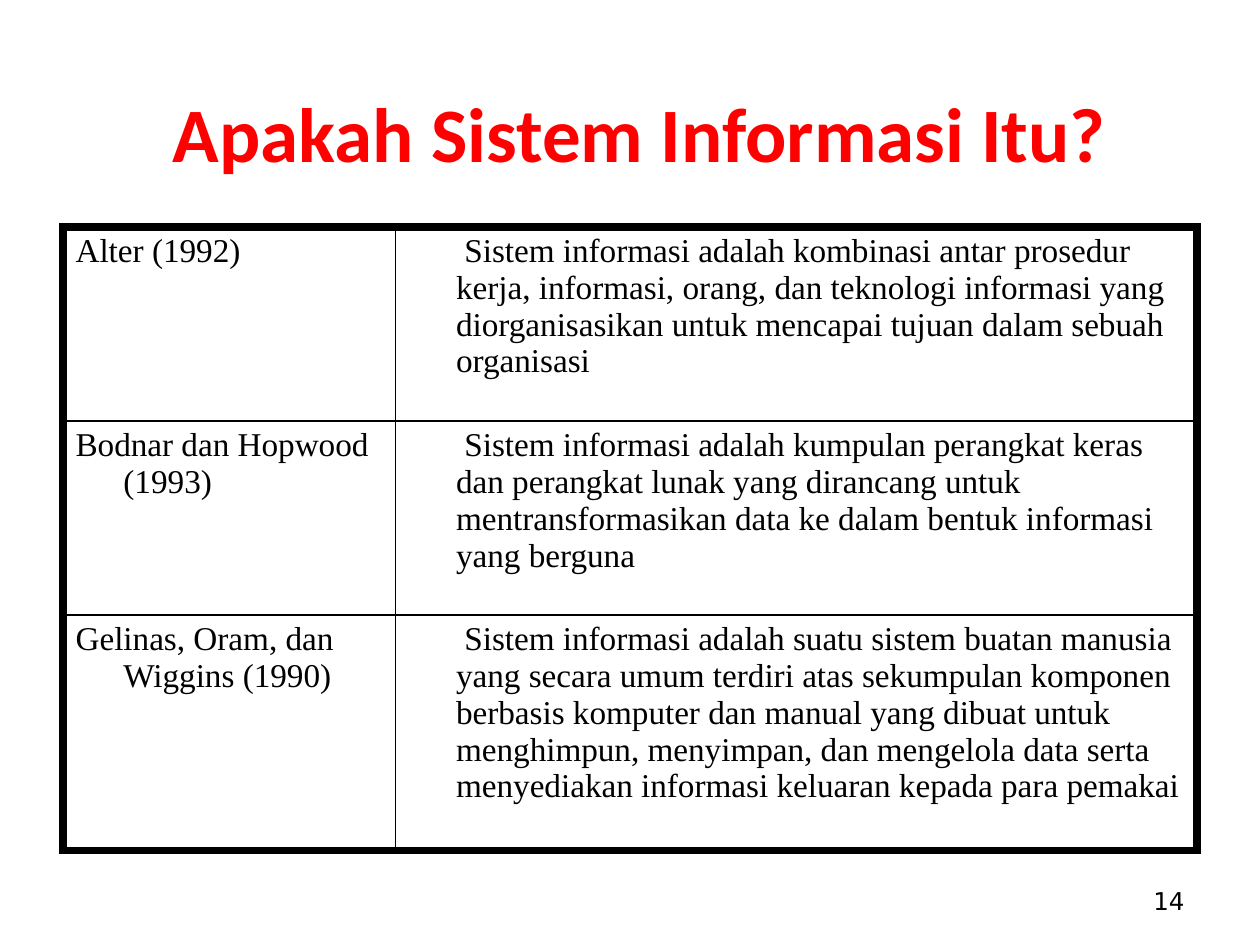
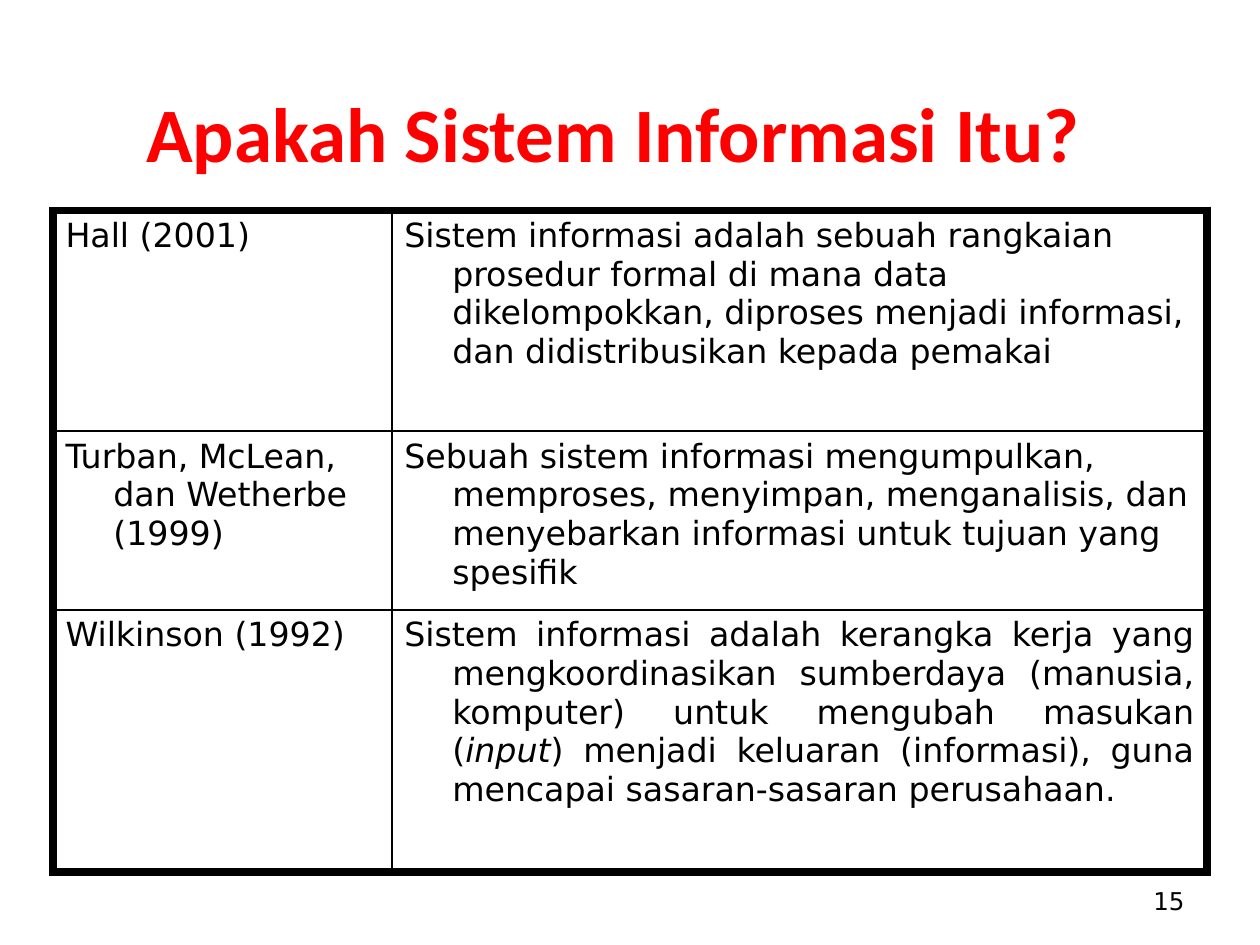
from dataclasses import dataclass

from lxml import etree
from pptx import Presentation
from pptx.dml.color import RGBColor
from pptx.enum.text import MSO_ANCHOR, PP_ALIGN
from pptx.oxml.ns import qn
from pptx.util import Inches, Pt

BLACK = RGBColor(0x00, 0x00, 0x00)
WHITE = RGBColor(0xFF, 0xFF, 0xFF)
RED = RGBColor(0xFF, 0x00, 0x00)
LEFT, CENTER, RIGHT, JUSTIFY = (PP_ALIGN.LEFT, PP_ALIGN.CENTER,
                                PP_ALIGN.RIGHT, PP_ALIGN.JUSTIFY)
MIDDLE = MSO_ANCHOR.MIDDLE

TITLE = "Apakah Sistem Informasi Itu?"
TITLE_FONT, SERIF, SANS = "Calibri", "Times New Roman", "DejaVu Sans"
OUTER_LINE, INNER_LINE = Pt(5), Pt(1)
HANGING = Inches(0.38)
TAB_STOPS = (Inches(-1), Inches(-0.5), Inches(0.3))


@dataclass(frozen=True)
class Definition:
    author: str
    wording: tuple[str, ...]  # every second piece is italic
    height: float
    align: PP_ALIGN = LEFT


@dataclass(frozen=True)
class DefinitionSlide:
    number: int
    title_left: float
    title_width: float
    left: float
    top: float
    col_widths: tuple[float, float]
    font: str
    definitions: tuple[Definition, ...]


SLIDES = (
    DefinitionSlide(14, 1.08, 8, 0.5, 1.8, (2.64, 6.36), SERIF, (
        Definition("Alter (1992)", (
            "\t Sistem informasi adalah kombinasi antar prosedur kerja, informasi, "
            "orang, dan teknologi informasi yang diorganisasikan untuk mencapai "
            "tujuan dalam sebuah organisasi",), 1.54),
        Definition("Bodnar dan Hopwood (1993)", (
            "\t Sistem informasi adalah kumpulan perangkat keras dan perangkat lunak "
            "yang dirancang untuk mentransformasikan data ke dalam bentuk informasi "
            "yang berguna",), 1.54),
        Definition("Gelinas, Oram, dan Wiggins (1990)", (
            "\t Sistem informasi adalah suatu sistem buatan manusia yang secara umum "
            "terdiri atas sekumpulan komponen berbasis komputer dan manual yang "
            "dibuat untuk menghimpun, menyimpan, dan mengelola data serta "
            "menyediakan informasi keluaran kepada para pemakai",), 1.87),
    )),
    DefinitionSlide(15, 0.58, 8.58, 0.42, 1.67, (2.69, 6.47), SANS, (
        Definition("Hall (2001)", (
            "Sistem informasi adalah sebuah rangkaian prosedur formal di mana data "
            "dikelompokkan, diproses menjadi informasi, dan didistribusikan kepada "
            "pemakai",), 1.75),
        Definition("Turban, McLean, dan Wetherbe (1999)", (
            "Sebuah sistem informasi mengumpulkan, memproses, menyimpan, "
            "menganalisis, dan menyebarkan informasi untuk tujuan yang spesifik",),
            1.42),
        Definition("Wilkinson (1992)", (
            "Sistem informasi adalah kerangka kerja yang mengkoordinasikan "
            "sumberdaya (manusia, komputer) untuk mengubah masukan (",
            "input",
            ") menjadi keluaran (informasi), guna mencapai sasaran-sasaran "
            "perusahaan."), 2.08, JUSTIFY),
    )),
)


def write_text(tf, *wording: str, font: str, size: float, color: RGBColor = BLACK,
               bold: bool = False, align: PP_ALIGN = LEFT):
    """Fill the first paragraph; every second piece is italic."""
    p = tf.paragraphs[0]
    p.alignment = align
    for i, piece in enumerate(wording):
        r = p.add_run()
        r.text = piece
        r.font.name, r.font.size = font, Pt(size)
        r.font.bold, r.font.italic = bold, i % 2 == 1
        r.font.color.rgb = color
    return p


def add_text(s, text: str, left: float, top: float, width: float, height: float,
             **style) -> None:
    tf = s.shapes.add_textbox(Inches(left), Inches(top),
                              Inches(width), Inches(height)).text_frame
    tf.word_wrap = True
    tf.vertical_anchor = MIDDLE
    write_text(tf, text, **style)


def set_hanging_indent(p) -> None:
    pPr = p._p.get_or_add_pPr()
    pPr.set("marL", str(HANGING))
    pPr.set("indent", str(-HANGING))
    tabs = etree.SubElement(pPr, qn("a:tabLst"))
    for pos in TAB_STOPS:
        etree.SubElement(tabs, qn("a:tab"), pos=str(pos), algn="l")


def set_borders(cell, outer_sides: dict[str, bool]) -> None:
    tcPr = cell._tc.get_or_add_tcPr()
    for side, is_outer in outer_sides.items():
        width = OUTER_LINE if is_outer else INNER_LINE
        ln = etree.SubElement(tcPr, qn(f"a:ln{side}"), w=str(width))
        fill = etree.SubElement(ln, qn("a:solidFill"))
        etree.SubElement(fill, qn("a:srgbClr"), val=str(BLACK))


def add_definition_table(s, layout: DefinitionSlide) -> None:
    rows = layout.definitions
    last_row, last_col = len(rows) - 1, len(layout.col_widths) - 1
    table = s.shapes.add_table(
        len(rows), len(layout.col_widths), Inches(layout.left), Inches(layout.top),
        Inches(sum(layout.col_widths)), Inches(sum(d.height for d in rows))).table
    table.first_row = table.horz_banding = False
    for column, width in zip(table.columns, layout.col_widths):
        column.width = Inches(width)
    for i, d in enumerate(rows):
        table.rows[i].height = Inches(d.height)
        contents = (((d.author,), LEFT), (d.wording, d.align))
        for j, (wording, align) in enumerate(contents):
            cell = table.cell(i, j)
            p = write_text(cell.text_frame, *wording, font=layout.font, size=19,
                           align=align)
            set_hanging_indent(p)
            set_borders(cell, {"L": j == 0, "R": j == last_col,
                               "T": i == 0, "B": i == last_row})
            cell.fill.solid()
            cell.fill.fore_color.rgb = WHITE


def main() -> None:
    prs = Presentation()
    prs.slide_width, prs.slide_height = Inches(10), Inches(7.5)
    for layout in SLIDES:
        s = prs.slides.add_slide(prs.slide_layouts[6])
        add_text(s, str(layout.number), 7.17, 6.95, 2.33, 0.4,
                 font=SANS, size=14, align=RIGHT)
        add_text(s, TITLE, layout.title_left, 0.42, layout.title_width, 1.25,
                 font=TITLE_FONT, size=44, color=RED, bold=True, align=CENTER)
        add_definition_table(s, layout)
    prs.save("out.pptx")


if __name__ == "__main__":
    main()
